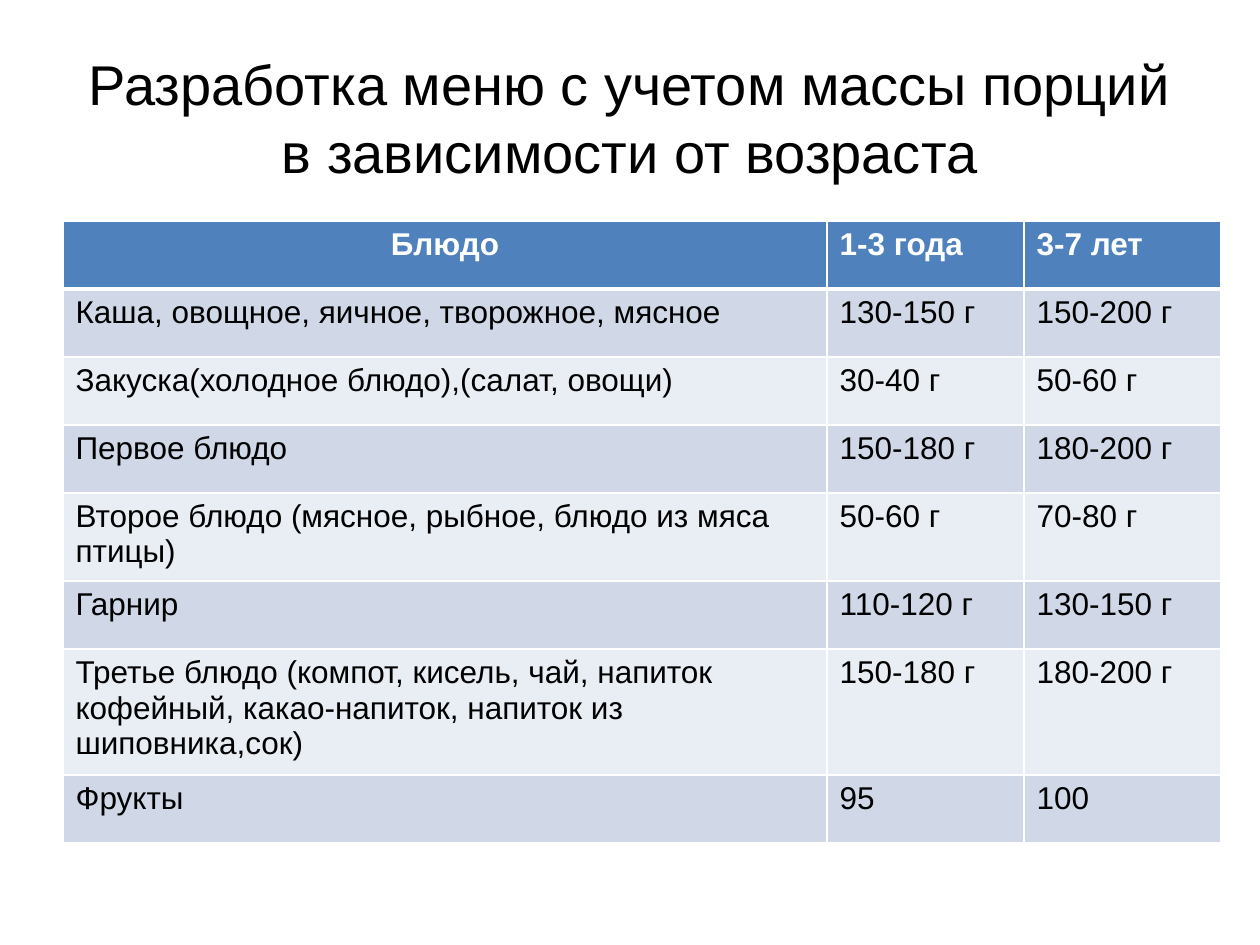
"""Build a slide with a table of portion sizes by age group."""
import dataclasses

import lxml.etree
import pptx
import pptx.dml.color
import pptx.enum.text
import pptx.oxml.ns
import pptx.util

EMU_PER_PX = 914400 / 126
CENTER = pptx.enum.text.PP_ALIGN.CENTER
LEFT = pptx.enum.text.PP_ALIGN.LEFT


@dataclasses.dataclass(frozen=True)
class Theme:
    font: str = "Arial"
    title_size: int = 32
    table_size: int = 18
    ink: str = "000000"
    paper: str = "FFFFFF"
    header: str = "4F81BD"
    bands: tuple = ("D0D8E8", "E9EDF4")
    rule: int = 1
    header_rule: int = 3


def px(length):
    return pptx.util.Emu(round(length * EMU_PER_PX))


def write(frame, text, *, font, size, color, bold=False, align=LEFT):
    para = frame.paragraphs[0]
    para.alignment = align
    span = para.add_run()
    span.text = text
    span.font.name = font
    span.font.size = pptx.util.Pt(size)
    span.font.bold = bold
    span.font.color.rgb = pptx.dml.color.RGBColor.from_string(color)


def draw_borders(cell, color, widths):
    properties = cell._tc.get_or_add_tcPr()
    for side, width in widths.items():
        line = lxml.etree.SubElement(
            properties, pptx.oxml.ns.qn(f"a:ln{side}"), w=str(pptx.util.Pt(width))
        )
        fill = lxml.etree.SubElement(line, pptx.oxml.ns.qn("a:solidFill"))
        lxml.etree.SubElement(fill, pptx.oxml.ns.qn("a:srgbClr"), val=color)


class SlideBuilder:
    def __init__(self, page, theme):
        self.page = page
        self.theme = theme

    def title(self, text, left, top, width, height):
        box = self.page.shapes.add_textbox(px(left), px(top), px(width), px(height))
        frame = box.text_frame
        frame.word_wrap = True
        frame.vertical_anchor = pptx.enum.text.MSO_ANCHOR.MIDDLE
        write(frame, text, font=self.theme.font, size=self.theme.title_size,
              color=self.theme.ink, align=CENTER)

    def table(self, rows, left, top, column_widths, row_height):
        table = self.page.shapes.add_table(
            len(rows), len(column_widths), px(left), px(top),
            px(sum(column_widths)), px(row_height * len(rows)),
        ).table
        for column, width in zip(table.columns, column_widths):
            column.width = px(width)
        for row_index, texts in enumerate(rows):
            table.rows[row_index].height = px(row_height)
            for column_index, text in enumerate(texts):
                self.cell(table.cell(row_index, column_index), text, row_index, column_index)

    def cell(self, cell, text, row, column):
        theme = self.theme
        is_header = row == 0
        draw_borders(cell, theme.paper, {
            "L": theme.rule,
            "R": theme.rule,
            "T": theme.header_rule if row == 1 else theme.rule,
            "B": theme.header_rule if is_header else theme.rule,
        })
        color = theme.header if is_header else theme.bands[(row - 1) % 2]
        cell.fill.solid()
        cell.fill.fore_color.rgb = pptx.dml.color.RGBColor.from_string(color)
        write(cell.text_frame, text, font=theme.font, size=theme.table_size,
              color=theme.paper if is_header else theme.ink, bold=is_header,
              align=CENTER if is_header and column == 0 else LEFT)


PORTIONS = [
    ("Блюдо", "1-3 года", "3-7 лет"),
    ("Каша, овощное, яичное, творожное, мясное", "130-150 г", "150-200 г"),
    ("Закуска(холодное блюдо),(салат, овощи)", "30-40 г", "50-60 г"),
    ("Первое блюдо", "150-180 г", "180-200 г"),
    ("Второе блюдо (мясное, рыбное, блюдо из мяса птицы)", "50-60 г", "70-80 г"),
    ("Гарнир", "110-120 г", "130-150 г"),
    ("Третье блюдо (компот, кисель, чай, напиток кофейный, какао-напиток, "
     "напиток из шиповника,сок)", "150-180 г", "180-200 г"),
    ("Фрукты", "95", "100"),
]


def main():
    deck = pptx.Presentation()
    deck.slide_width = px(1260)
    deck.slide_height = px(945)
    builder = SlideBuilder(deck.slides.add_slide(deck.slide_layouts[6]), Theme())
    builder.title("Разработка меню с учетом массы порций в зависимости от возраста",
                  63, 38, 1134, 158)
    builder.table(PORTIONS, 63, 221, (764, 197, 197), 68)
    deck.save("out.pptx")


if __name__ == "__main__":
    main()
